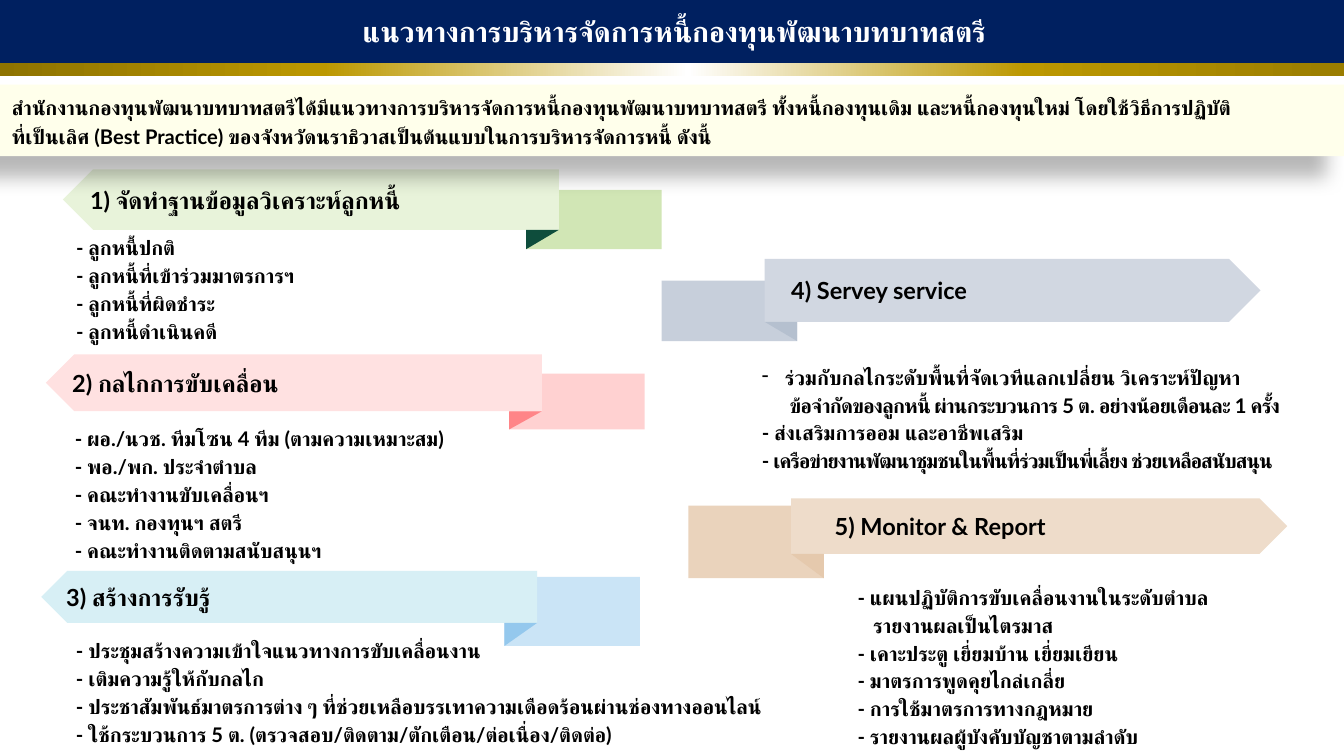
from lxml import etree
from pptx import Presentation
from pptx import util as u
from pptx.dml.color import RGBColor
from pptx.enum import shapes, text
from pptx.oxml import parse_xml
from pptx.oxml.ns import nsdecls, qn

FONT = "Lato"
TITLE = "แนวทางการบริหารจัดการหนี้กองทุนพัฒนาบทบาทสตรี"
INTRO = (
    "สำนักงานกองทุนพัฒนาบทบาทสตรีได้มีแนวทางการบริหารจัดการหนี้กองทุนพัฒนาบทบาทสตรี "
    "ทั้งหนี้กองทุนเดิม และหนี้กองทุนใหม่ โดยใช้วิธีการปฏิบัติ\v"
    "ที่เป็นเลิศ (Best Practice) ของจังหวัดนราธิวาสเป็นต้นแบบในการบริหารจัดการหนี้ ดังนี้"
)
GOLD_STOPS = [(0, "8E7300"), (24, "BC9800"), (51, "FFFFFF"), (76, "BC9800"), (100, "9A7D00")]

# heading, faces left, plate (left, top, height), tail (top, height), text inset, colours (tail, plate, fold)
RIBBONS = [
    ("1) จัดทำฐานข้อมูลวิเคราะห์ลูกหนี้", True, (0.52, 1.4, 0.5), (1.57, 0.49), 0.1,
     ("D1E6B5", "E8F3DA", "0E4D3C")),
    ("4) Servey service", False, (6.32, 2.14, 0.52), (2.32, 0.5), 0.22,
     ("C7CFDB", "D1D7E1", "B5C0CF")),
    ("2) กลไกการขับเคลื่อน", True, (0.38, 2.93, 0.47), (3.09, 0.46), 0.1,
     ("FFD1D1", "FFE1E1", "FF8588")),
    ("5) Monitor & Report", False, (6.54, 4.12, 0.46), (4.18, 0.6), 0.36,
     ("EAD3BC", "EEDCCA", "E5C9AD")),
    ("3) สร้างการรับรู้", True, (0.34, 4.72, 0.43), (4.77, 0.57), 0.1,
     ("CAE4F6", "D7EFF5", "94C8ED")),
]
PLATE_WIDTH, TAIL_WIDTH, FOLD_WIDTH = 4.1, 1.12, 0.27

# box, then paragraphs: text or (text, format)
LISTS = [
    ((0.53, 1.87, 3.39, 1.02), [
        "- ลูกหนี้ปกติ",
        "- ลูกหนี้ที่เข้าร่วมมาตรการฯ",
        "- ลูกหนี้ที่ผิดชำระ",
        "- ลูกหนี้ดำเนินคดี"]),
    ((0.52, 3.45, 3.9, 1.26), [
        "- ผอ./นวช. ทีมโซน 4 ทีม (ตามความเหมาะสม)",
        "- พอ./พก. ประจำตำบล",
        "- คณะทำงานขับเคลื่อนฯ",
        "- จนท. กองทุนฯ สตรี",
        "- คณะทำงานติดตามสนับสนุนฯ"]),
    ((0.53, 5.2, 6.33, 1.03), [
        "- ประชุมสร้างความเข้าใจแนวทางการขับเคลื่อนงาน",
        "- เติมความรู้ให้กับกลไก",
        "- ประชาสัมพันธ์มาตรการต่าง ๆ ที่ช่วยเหลือบรรเทาความเดือดร้อนผ่านช่องทางออนไลน์",
        "- ใช้กระบวนการ 5 ต. (ตรวจสอบ/ติดตาม/ตักเตือน/ต่อเนื่อง/ติดต่อ)"]),
    ((6.2, 2.94, 5.04, 1.03), [
        ("ร่วมกับกลไกระดับพื้นที่จัดเวทีแลกเปลี่ยน วิเคราะห์ปัญหา", {"indent": 0.19, "bullet": "-"}),
        ("ข้อจำกัดของลูกหนี้ ผ่านกระบวนการ 5 ต. อย่างน้อยเดือนละ 1 ครั้ง",
         {"indent": 0.23, "tracking": -0.4}),
        "- ส่งเสริมการออม และอาชีพเสริม",
        ("- เครือข่ายงานพัฒนาชุมชนในพื้นที่ร่วมเป็นพี่เลี้ยง ช่วยเหลือสนับสนุน", {"tracking": -0.6})]),
    ((6.99, 4.76, 3.99, 1.49), [
        "- แผนปฏิบัติการขับเคลื่อนงานในระดับตำบล",
        ("รายงานผลเป็นไตรมาส", {"indent": 0.13}),
        "- เคาะประตู เยี่ยมบ้าน เยี่ยมเยียน",
        "- มาตรการพูดคุยไกล่เกลี่ย",
        "- การใช้มาตรการทางกฎหมาย",
        "- รายงานผลผู้บังคับบัญชาตามลำดับ"]),
]


def rgb(value):
    return RGBColor.from_string(value)


def write(paragraph, words, size=12, color="000000", align=text.PP_ALIGN.LEFT,
          spacing=1.0, indent=0, bullet=None, tracking=0):
    paragraph.text = words
    paragraph.alignment = align
    paragraph.line_spacing = spacing
    properties = paragraph._p.get_or_add_pPr()
    if indent:
        properties.set("marL", str(u.Inches(indent)))
    if bullet:
        properties.set("indent", str(-u.Inches(indent)))
        etree.SubElement(properties, qn("a:buChar")).set("char", bullet)
    for run in paragraph.runs:
        run.font.name = FONT
        run.font.size = u.Pt(size)
        run.font.bold = True
        run.font.color.rgb = rgb(color)
        run_properties = run._r.get_or_add_rPr()
        etree.SubElement(run_properties, qn("a:cs")).set("typeface", FONT)
        if tracking:
            run_properties.set("spc", str(round(tracking * 100)))


def add_block(parent, kind, box, color, rotation=0, flips=()):
    """Add a preset shape with a plain fill and no line or shadow."""
    shape = parent.add_shape(kind, *map(u.Inches, box))
    shape.shadow.inherit = False
    shape.fill.solid()
    shape.fill.fore_color.rgb = rgb(color)
    shape.line.fill.background()
    shape.rotation = rotation
    for flip in flips:
        shape._element.spPr.find(qn("a:xfrm")).set(flip, "1")
    return shape


def add_ribbon(slide, heading, faces_left, plate_place, tail_place, inset, colors):
    left, top, height = plate_place
    tail_top, tail_height = tail_place
    plate_bottom = top + height
    if faces_left:
        fold_left = tail_left = left + PLATE_WIDTH - FOLD_WIDTH
    else:
        fold_left, tail_left = left, left + FOLD_WIDTH - TAIL_WIDTH
    kinds = shapes.MSO_SHAPE
    group = slide.shapes.add_group_shape().shapes
    add_block(group, kinds.RECTANGLE, (tail_left, tail_top, TAIL_WIDTH, tail_height), colors[0])
    plate = add_block(group, kinds.PENTAGON, (left, top, PLATE_WIDTH, height), colors[1],
                      180 if faces_left else 0, ["flipV"] if faces_left else [])
    add_block(group, kinds.RIGHT_TRIANGLE,
              (fold_left, plate_bottom, FOLD_WIDTH, tail_top + tail_height - plate_bottom),
              colors[2], 180, ["flipH"] if faces_left else [])
    frame = plate.text_frame
    frame.margin_left = u.Inches(inset)
    frame.vertical_anchor = text.MSO_ANCHOR.MIDDLE
    write(frame.paragraphs[0], heading, size=14)


def add_list(slide, box, items):
    frame = slide.shapes.add_textbox(*map(u.Inches, box)).text_frame
    frame.word_wrap = True
    frame.auto_size = text.MSO_AUTO_SIZE.SHAPE_TO_FIT_TEXT
    for number, item in enumerate(items):
        words, style = (item, {}) if isinstance(item, str) else item
        paragraph = frame.add_paragraph() if number else frame.paragraphs[0]
        write(paragraph, words, spacing=1.15, **style)


def add_header(slide):
    bar = add_block(slide.shapes, shapes.MSO_SHAPE.RECTANGLE, (0, 0, 11.15, 0.63), "BC9800")
    stops = "".join(f'<a:gs pos="{place * 1000}"><a:srgbClr val="{color}"/></a:gs>'
                    for place, color in GOLD_STOPS)
    solid = bar._element.spPr.find(qn("a:solidFill"))
    solid.getparent().replace(solid, parse_xml(
        f'<a:gradFill {nsdecls("a")}><a:gsLst>{stops}</a:gsLst><a:lin ang="0" scaled="0"/></a:gradFill>'))

    title = slide.shapes.title
    title.left, title.top, title.width, title.height = map(u.Inches, (0, 0, 11.15, 0.52))
    title.fill.solid()
    title.fill.fore_color.rgb = rgb("002060")
    frame = title.text_frame
    frame.auto_size = text.MSO_AUTO_SIZE.NONE
    frame.vertical_anchor = text.MSO_ANCHOR.MIDDLE
    write(frame.paragraphs[0], TITLE, size=17, color="FFFFFF", align=text.PP_ALIGN.CENTER)
    bar._element.addnext(title._element)


def add_intro(slide):
    banner = add_block(slide.shapes, shapes.MSO_SHAPE.RECTANGLE, (0, 0.7, 11.16, 0.59), "FFFFEB")
    effects = banner._element.spPr.find(qn("a:effectLst"))
    effects.append(parse_xml(
        f'<a:outerShdw {nsdecls("a")} blurRad="{u.Pt(11.8)}" dist="{u.Pt(19.7)}" dir="{141 * 60000}" '
        'algn="tl" rotWithShape="0"><a:srgbClr val="000000"><a:alpha val="28000"/></a:srgbClr>'
        '</a:outerShdw>'))
    frame = banner.text_frame
    frame.word_wrap = True
    frame.auto_size = text.MSO_AUTO_SIZE.SHAPE_TO_FIT_TEXT
    frame.vertical_anchor = text.MSO_ANCHOR.TOP
    write(frame.paragraphs[0], INTRO, spacing=1.2)


def main():
    presentation = Presentation()
    presentation.slide_width, presentation.slide_height = u.Inches(11.11), u.Inches(6.25)
    slide = presentation.slides.add_slide(presentation.slide_layouts[5])
    for ribbon in RIBBONS:
        add_ribbon(slide, *ribbon)
    for box, items in LISTS:
        add_list(slide, box, items)
    add_header(slide)
    add_intro(slide)
    presentation.save("out.pptx")


if __name__ == "__main__":
    main()
